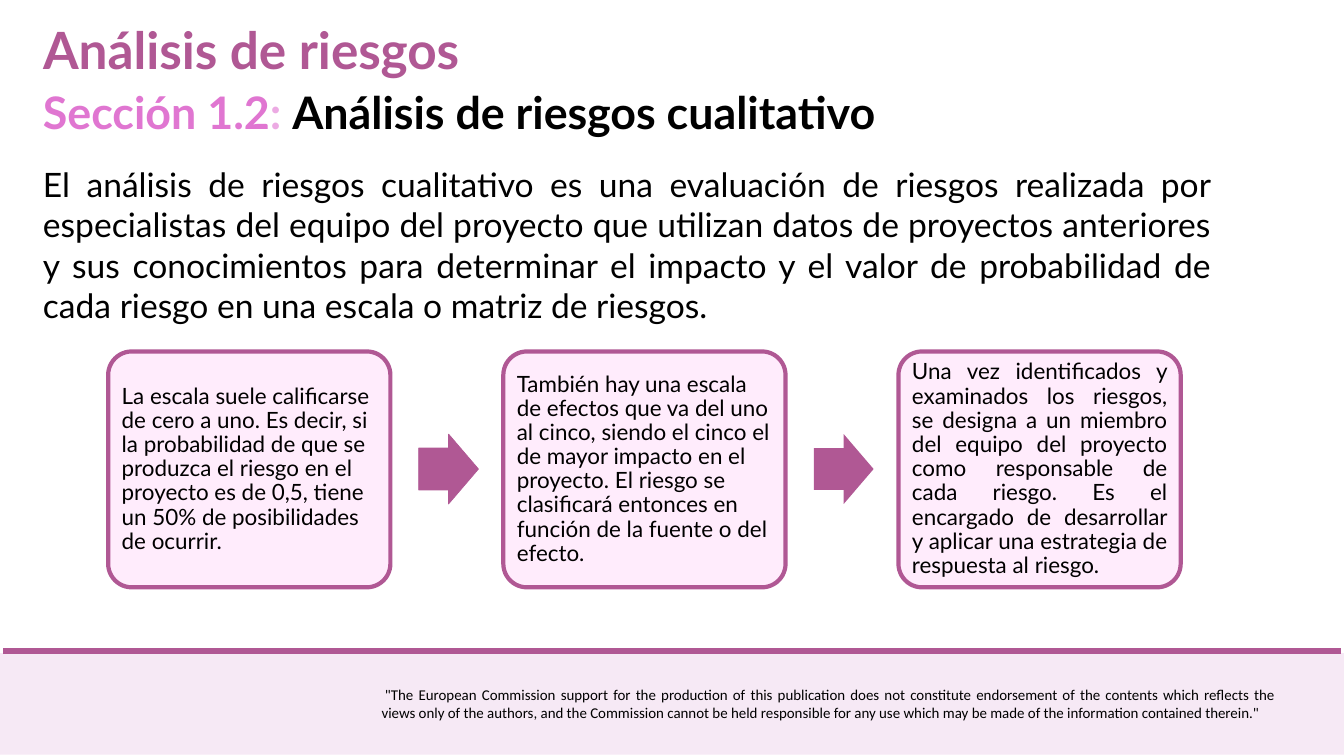
"""Build the qualitative risk analysis slide."""
from dataclasses import dataclass

from lxml.etree import SubElement
from pptx import Presentation
from pptx.dml.color import RGBColor
from pptx.enum.shapes import MSO_CONNECTOR, MSO_SHAPE
from pptx.enum.text import MSO_ANCHOR, MSO_AUTO_SIZE, PP_ALIGN
from pptx.oxml.ns import qn
from pptx.shapes.base import BaseShape
from pptx.slide import Slide
from pptx.text.text import TextFrame
from pptx.util import Emu, Pt

EMU_PER_PX = 9144
COLORS = {
    "plum": "B05894",
    "band": "F6E9F5",
    "card": "FFECFC",
    "orchid": "E076D1",
    "pale": "ECAAE3",
    "black": "000000",
}
CARD_TOP, CARD_WIDTH, CARD_HEIGHT = 523, 420, 351
FIRST_CARD_LEFT, CARD_PITCH = 161, 588
ARROW_OFFSET, ARROW_WIDTH, ARROW_HEIGHT = 462, 89, 104


@dataclass(frozen=True)
class Box:
    left: int
    top: int
    width: int
    height: int

    def emu(self) -> tuple[Emu, Emu, Emu, Emu]:
        return px(self.left), px(self.top), px(self.width), px(self.height)


@dataclass(frozen=True)
class Words:
    text: str
    color: str = "black"


@dataclass(frozen=True)
class Style:
    size: int
    bold: bool = False
    font: str = "Lato"
    align: PP_ALIGN = PP_ALIGN.LEFT
    spacing: float = 1.0
    indent: int = 0


@dataclass(frozen=True)
class Step:
    text: str
    align: PP_ALIGN = PP_ALIGN.LEFT
    arrow_line: float = 0
    has_next: bool = True


STEPS = [
    Step("La escala suele calificarse de cero a uno. Es decir, si la probabilidad de que "
         "se produzca el riesgo en el proyecto es de 0,5, tiene un 50% de posibilidades "
         "de ocurrir.", arrow_line=0.75),
    Step("También hay una escala de efectos que va del uno al cinco, siendo el cinco el de "
         "mayor impacto en el proyecto. El riesgo se clasificará entonces en función de la "
         "fuente o del efecto."),
    Step("Una vez identificados y examinados los riesgos, se designa a un miembro del equipo "
         "del proyecto como responsable de cada riesgo. Es el encargado de desarrollar y "
         "aplicar una estrategia de respuesta al riesgo.", PP_ALIGN.JUSTIFY, has_next=False),
]
DEFINITION = (
    "El análisis de riesgos cualitativo es una evaluación de riesgos realizada por "
    "especialistas del equipo del proyecto que utilizan datos de proyectos anteriores y sus "
    "conocimientos para determinar el impacto y el valor de probabilidad de cada riesgo en "
    "una escala o matriz de riesgos."
)
DISCLAIMER = (
    '"The European Commission support for the production of this publication does not '
    "constitute endorsement of the contents which reflects the views only of the authors, "
    "and the Commission cannot be held responsible for any use which may be made of the "
    'information contained therein."'
)


def px(length: int) -> Emu:
    return Emu(length * EMU_PER_PX)


def rgb(color: str) -> RGBColor:
    return RGBColor.from_string(COLORS[color])


def write(frame: TextFrame, words: list[Words], style: Style,
          anchor: MSO_ANCHOR = MSO_ANCHOR.TOP) -> None:
    frame.word_wrap = True
    frame.auto_size = MSO_AUTO_SIZE.NONE
    frame.vertical_anchor = anchor
    paragraph = frame.paragraphs[0]
    paragraph.alignment = style.align
    paragraph.line_spacing = style.spacing
    if style.indent:
        paragraph._p.get_or_add_pPr().set("indent", str(px(style.indent)))
    for part in words:
        run = paragraph.add_run()
        run.text = part.text
        run.font.name = style.font
        run.font.size = Pt(style.size)
        run.font.bold = style.bold
        run.font.color.rgb = rgb(part.color)


def add_text(slide: Slide, box: Box, words: list[Words], style: Style) -> None:
    write(slide.shapes.add_textbox(*box.emu()).text_frame, words, style)


def paint(shape: BaseShape, fill: str, line: str, width: float) -> None:
    shape.shadow.inherit = False
    shape.fill.solid()
    shape.fill.fore_color.rgb = rgb(fill)
    if width:
        shape.line.color.rgb = rgb(line)
        shape.line.width = Pt(width)
    else:
        shape.line.fill.background()


def add_footer(slide: Slide) -> None:
    band = slide.shapes.add_shape(MSO_SHAPE.RECTANGLE, *Box(0, 972, 2000, 151).emu())
    paint(band, "band", "band", 0)
    rule = slide.shapes.add_connector(MSO_CONNECTOR.STRAIGHT, px(5), px(969), px(1995), px(969))
    rule.line.color.rgb = rgb("plum")
    rule.line.width = Pt(6.75)
    SubElement(rule._element.spPr, qn("a:effectLst"))
    add_text(slide, Box(558, 1015, 1350, 64), [Words(DISCLAIMER)],
             Style(16, font="Calibri", align=PP_ALIGN.JUSTIFY, indent=5))


def add_step(slide: Slide, step: Step, left: int) -> None:
    card = slide.shapes.add_shape(
        MSO_SHAPE.ROUNDED_RECTANGLE, *Box(left, CARD_TOP, CARD_WIDTH, CARD_HEIGHT).emu())
    card.adjustments[0] = 0.1
    paint(card, "card", "plum", 4.5)
    frame = card.text_frame
    frame.margin_left = frame.margin_right = frame.margin_top = frame.margin_bottom = px(10)
    write(frame, [Words(step.text)], Style(24, align=step.align, spacing=0.9), MSO_ANCHOR.MIDDLE)
    if step.has_next:
        arrow_top = CARD_TOP + (CARD_HEIGHT - ARROW_HEIGHT) // 2
        arrow = slide.shapes.add_shape(
            MSO_SHAPE.RIGHT_ARROW,
            *Box(left + ARROW_OFFSET, arrow_top, ARROW_WIDTH, ARROW_HEIGHT).emu())
        arrow.adjustments[0], arrow.adjustments[1] = 0.6, 0.5
        paint(arrow, "plum", "plum", step.arrow_line)


def main() -> None:
    deck = Presentation()
    deck.slide_width, deck.slide_height = px(2000), px(1125)
    slide = deck.slides.add_slide(deck.slide_layouts[5])
    add_footer(slide)
    title = slide.shapes.title
    title.left, title.top, title.width, title.height = Box(54, 22, 1046, 103).emu()
    write(title.text_frame, [Words("Análisis de riesgos", "plum")], Style(55, bold=True))
    add_text(slide, Box(54, 121, 1487, 91),
             [Words("Sección 1.2", "orchid"), Words(": ", "pale"),
              Words("Análisis de riesgos cualitativo")], Style(48, bold=True))
    add_text(slide, Box(54, 239, 1758, 252), [Words(DEFINITION)],
             Style(36, align=PP_ALIGN.JUSTIFY))
    for index, step in enumerate(STEPS):
        add_step(slide, step, FIRST_CARD_LEFT + index * CARD_PITCH)
    deck.save("out.pptx")


if __name__ == "__main__":
    main()
